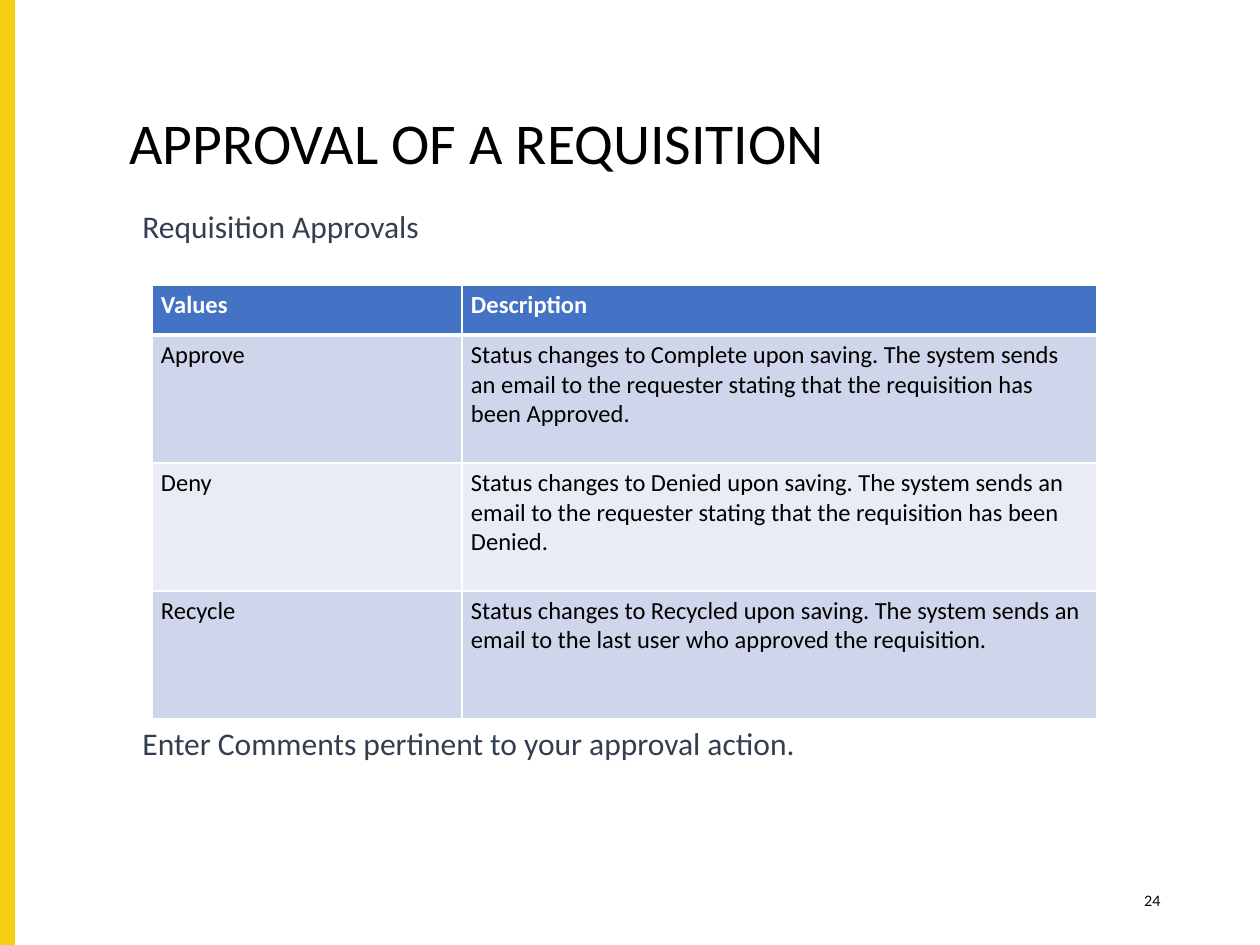
import pptx
import pptx.dml.color
import pptx.enum.shapes
import pptx.enum.text
import pptx.oxml
import pptx.oxml.ns
import pptx.util

EMU_PER_PX = 914400 / 126
COLORS = {
    "accent": "F4CE12",
    "text": "000000",
    "body": "333F50",
    "header": "4472C4",
    "band_dark": "CFD5EA",
    "band_light": "E9EBF5",
    "white": "FFFFFF",
}
ANCHOR = pptx.enum.text.MSO_ANCHOR
ALIGN = pptx.enum.text.PP_ALIGN


def px(length):
    return pptx.util.Emu(round(length * EMU_PER_PX))


def color(name):
    return pptx.dml.color.RGBColor.from_string(COLORS[name])


def write(paragraph, text, size=14, font="Calibri", fill="text", bold=False,
          align=ALIGN.LEFT, line_spacing=1.0, space_before=0):
    paragraph.alignment = align
    paragraph.line_spacing = line_spacing
    paragraph.space_before = pptx.util.Pt(space_before)
    run = paragraph.add_run()
    run.text = text
    run.font.name = font
    run.font.size = pptx.util.Pt(size)
    run.font.bold = bold
    run.font.color.rgb = color(fill)


def add_borders(cell, bottom_width):
    """Give a cell white borders, 1 pt wide except at the bottom."""
    properties = cell._tc.get_or_add_tcPr()
    widths = {"lnL": 1, "lnR": 1, "lnT": 1, "lnB": bottom_width}
    for position, (tag, width) in enumerate(widths.items()):
        border = pptx.oxml.parse_xml(
            f'<a:{tag} {pptx.oxml.ns.nsdecls("a")} w="{pptx.util.Pt(width)}">'
            f'<a:solidFill><a:srgbClr val="{COLORS["white"]}"/></a:solidFill></a:{tag}>')
        properties.insert(position, border)


class SlideBuilder:
    def __init__(self, presentation):
        self.slide = presentation.slides.add_slide(presentation.slide_layouts[5])

    def title(self, text, left, top, width, height):
        shape = self.slide.shapes.title
        shape.left, shape.top, shape.width, shape.height = map(px, (left, top, width, height))
        frame = shape.text_frame
        frame.auto_size = pptx.enum.text.MSO_AUTO_SIZE.NONE
        frame.vertical_anchor = ANCHOR.MIDDLE
        write(frame.paragraphs[0], text, size=33, line_spacing=0.9)

    def bar(self, left, top, width, height, fill):
        shape = self.slide.shapes.add_shape(
            pptx.enum.shapes.MSO_SHAPE.RECTANGLE, *map(px, (left, top, width, height)))
        shape.shadow.inherit = False
        shape.fill.solid()
        shape.fill.fore_color.rgb = color(fill)
        shape.line.color.rgb = color(fill)
        shape.line.width = pptx.util.Pt(1)

    def text(self, lines, left, top, width, height, anchor=ANCHOR.TOP, gap=0, **style):
        """Write one paragraph per line, with gap points between them."""
        frame = self.slide.shapes.add_textbox(*map(px, (left, top, width, height))).text_frame
        frame.word_wrap = True
        frame.vertical_anchor = anchor
        for index, line in enumerate(lines):
            paragraph = frame.add_paragraph() if index else frame.paragraphs[0]
            write(paragraph, line, space_before=gap if index else 0, **style)

    def table(self, rows, left, top, column_widths, row_heights):
        table = self.slide.shapes.add_table(
            len(rows), len(column_widths), px(left), px(top),
            px(sum(column_widths)), px(sum(row_heights))).table
        for column, width in zip(table.columns, column_widths):
            column.width = px(width)
        for row_index, (values, height) in enumerate(zip(rows, row_heights)):
            table.rows[row_index].height = px(height)
            is_header = row_index == 0
            band = "band_dark" if row_index % 2 else "band_light"
            for column_index, value in enumerate(values):
                cell = table.cell(row_index, column_index)
                cell.margin_left = cell.margin_right = px(9)
                cell.margin_top = cell.margin_bottom = px(5)
                cell.fill.solid()
                cell.fill.fore_color.rgb = color("header" if is_header else band)
                add_borders(cell, bottom_width=3 if is_header else 1)
                write(cell.text_frame.paragraphs[0], value, bold=is_header,
                      fill="white" if is_header else "text")


def main():
    presentation = pptx.Presentation()
    presentation.slide_width, presentation.slide_height = px(1260), px(945)
    builder = SlideBuilder(presentation)
    builder.bar(0, 0, 14, 945, "accent")
    builder.title("APPROVAL OF A REQUISITION", 117, 105, 862, 82)
    builder.text(
        ["Requisition Approvals", "Enter Comments pertinent to your approval action."],
        130, 205, 1029, 694, gap=276, size=18, fill="body", line_spacing=0.9)
    builder.text(["24"], 890, 876, 283, 50, anchor=ANCHOR.MIDDLE,
                 size=8.2, font="Lato", align=ALIGN.RIGHT)
    approvals = [
        ("Values", "Description"),
        ("Approve", "Status changes to Complete upon saving. The system sends an email "
                    "to the requester stating that the requisition has been Approved."),
        ("Deny", "Status changes to Denied upon saving. The system sends an email "
                 "to the requester stating that the requisition has been Denied."),
        ("Recycle", "Status changes to Recycled upon saving. The system sends an email "
                    "to the last user who approved the requisition."),
    ]
    builder.table(approvals, 152, 285, [310, 635], [50, 128, 128, 128])
    presentation.save("out.pptx")


if __name__ == "__main__":
    main()
